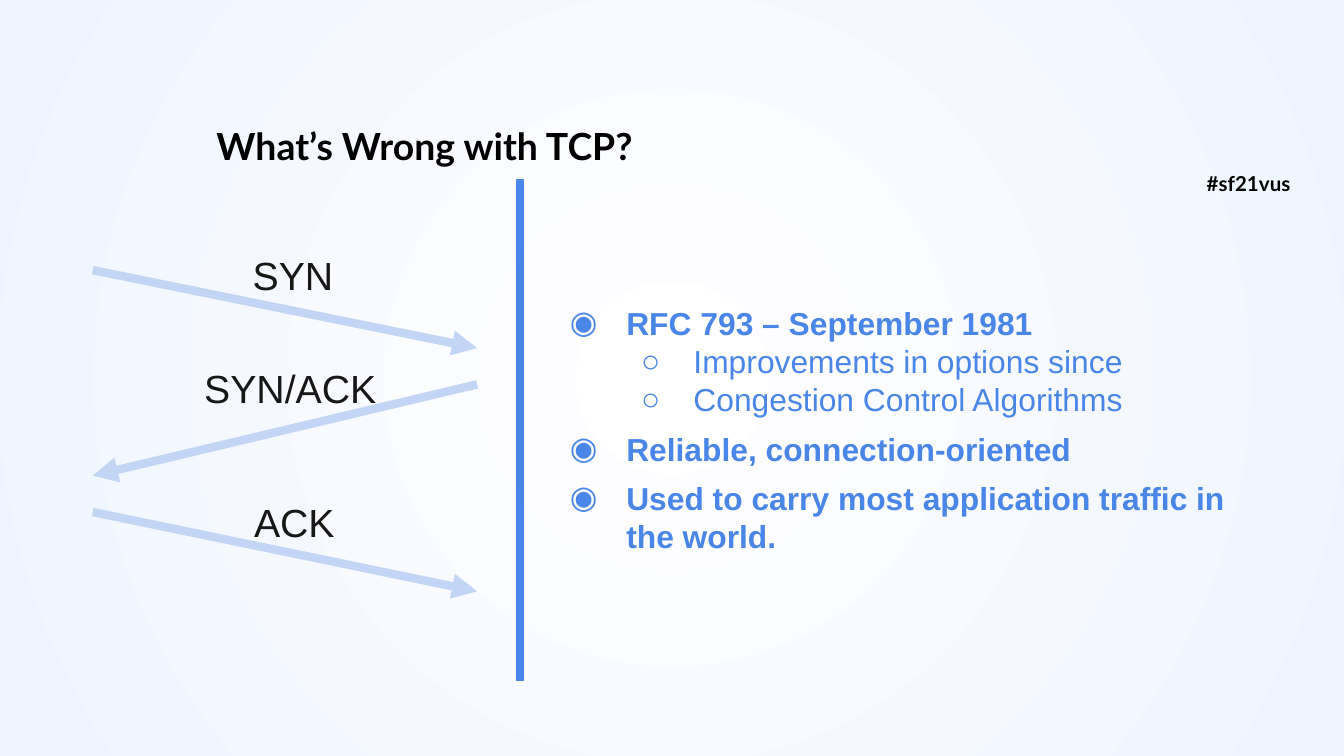
from lxml.etree import SubElement
from pptx import Presentation
from pptx.dml.color import RGBColor
from pptx.enum.shapes import MSO_CONNECTOR as Connector
from pptx.enum.text import MSO_ANCHOR as Anchor, MSO_AUTO_SIZE as AutoSize, PP_ALIGN as Align
from pptx.oxml.ns import qn
from pptx.util import Inches, Pt

WHITE = RGBColor(0xFF, 0xFF, 0xFF)
PALE_BLUE = RGBColor(0xEE, 0xF4, 0xFF)
BLUE = RGBColor(0x4A, 0x86, 0xE8)
LIGHT_BLUE = RGBColor(0xC3, 0xD5, 0xF4)
BLACK = RGBColor(0, 0, 0)
INK = RGBColor(0x17, 0x17, 0x17)

POINTS = [
    (0, "RFC 793 – September 1981"),
    (1, "Improvements in options since"),
    (1, "Congestion Control Algorithms"),
    (0, "Reliable, connection-oriented"),
    (0, "Used to carry most application traffic in the world."),
]
BULLETS = [("◉", 0.5, -0.42), ("○", 1, -0.39)]
CLIENT, SERVER = 0.69, 3.55
HANDSHAKE = [
    ("SYN", (1.88, 1.5, 0.75, 0.75), (CLIENT, 2.01), (SERVER, 2.59)),
    ("SYN/ACK", (1.52, 2.34, 1.47, 0.75), (SERVER, 2.86), (CLIENT, 3.54)),
    ("ACK", (1.89, 3.34, 0.75, 0.75), (CLIENT, 3.81), (SERVER, 4.4)),
]


def write_text(paragraph, text, size=17, font="Arial", color=BLACK, bold=False):
    """Add a formatted run of text to a paragraph."""
    run = paragraph.add_run()
    run.text = text
    run.font.size = Pt(size)
    run.font.name = font
    run.font.color.rgb = color
    run.font.bold = bold


class SlideBuilder:
    """Hold the style and the current slide, and add elements to it."""

    heading_font = "Lato"
    body_font = "Arial"

    def __init__(self, slide):
        """Start building on the given slide."""
        self.slide = slide

    def background(self, center, edge):
        """Fill the background with a circular gradient."""
        fill = self.slide.background.fill
        fill.gradient()
        for stop, color in zip(fill.gradient_stops, (center, edge)):
            stop.color.rgb = color
        linear = next(self.slide.element.iter(qn("a:lin")))
        gradient = linear.getparent()
        gradient.remove(linear)
        circle = SubElement(gradient, qn("a:path"), {"path": "circle"})
        SubElement(circle, qn("a:fillToRect"), dict.fromkeys("ltrb", "50000"))

    def frame(self, shape, box, insets, anchor, wrap=True):
        """Place a text shape and return its set-up text frame."""
        shape.left, shape.top, shape.width, shape.height = map(Inches, box)
        frame = shape.text_frame
        frame.auto_size = AutoSize.NONE
        frame.word_wrap = wrap
        frame.vertical_anchor = anchor
        (frame.margin_left, frame.margin_top,
         frame.margin_right, frame.margin_bottom) = map(Inches, insets)
        return frame

    def title(self, text, box):
        """Fill the title placeholder."""
        frame = self.frame(self.slide.shapes.title, box, [0.1] * 4, Anchor.MIDDLE)
        frame.paragraphs[0].alignment = Align.LEFT
        write_text(frame.paragraphs[0], text, size=20, font=self.heading_font, bold=True)

    def bullets(self, points, box):
        """Fill the body placeholder with a two-level list."""
        body = self.slide.placeholders[1]
        frame = self.frame(body, box, (0, 0.1, 0.1, 0.1), Anchor.MIDDLE)
        for index, (level, text) in enumerate(points):
            paragraph = frame.add_paragraph() if index else frame.paragraphs[0]
            paragraph.level = level
            paragraph.space_before = Pt(6 if index and level == 0 else 0)
            mark, margin, indent = BULLETS[level]
            properties = paragraph._p.get_or_add_pPr()
            properties.set("marL", str(Inches(margin)))
            properties.set("indent", str(Inches(indent)))
            mark_color = SubElement(properties, qn("a:buClr"))
            SubElement(mark_color, qn("a:srgbClr"), val=str(BLUE))
            SubElement(properties, qn("a:buFont"), typeface=self.body_font)
            SubElement(properties, qn("a:buChar"), char=mark)
            write_text(paragraph, text, font=self.body_font, color=BLUE, bold=level == 0)

    def hashtag(self, text, box):
        """Add the event hashtag in a box that grows with its text."""
        label = self.slide.shapes.add_textbox(0, 0, 0, 0)
        frame = self.frame(label, box, [0.1] * 4, Anchor.TOP)
        frame.auto_size = AutoSize.SHAPE_TO_FIT_TEXT
        write_text(frame.paragraphs[0], text, size=11, font=self.heading_font, bold=True)

    def message(self, text, box):
        """Add the label of a handshake message."""
        label = self.slide.shapes.add_textbox(0, 0, 0, 0)
        frame = self.frame(label, box, (0, 0.03, 0.05, 0.03), Anchor.BOTTOM, wrap=False)
        frame.paragraphs[0].line_spacing = 0.85
        write_text(frame.paragraphs[0], text, size=21, font=self.body_font, color=INK)

    def line(self, start, end, color, width, arrow=False):
        """Add a straight line, with an arrowhead at its end if asked."""
        points = map(Inches, (*start, *end))
        connector = self.slide.shapes.add_connector(Connector.STRAIGHT, *points)
        connector.line.color.rgb = color
        connector.line.width = Pt(width)
        if arrow:
            SubElement(connector.line._get_or_add_ln(), qn("a:tailEnd"), type="triangle")
        SubElement(connector._element.spPr, qn("a:effectLst"))


def main():
    """Build the slide and save it."""
    deck = Presentation()
    deck.slide_width, deck.slide_height = Inches(10), Inches(10) * 9 // 16
    builder = SlideBuilder(deck.slides.add_slide(deck.slide_layouts[1]))
    builder.background(WHITE, PALE_BLUE)
    builder.hashtag("#sf21vus", (8.88, 1.18, 1.12, 0.39))
    builder.line((3.87, 1.33), (3.87, 5.07), BLUE, 4)
    builder.title("What’s Wrong with TCP?", (1.51, 0.84, 7.45, 0.48))
    builder.bullets(POINTS, (4.16, 1.33, 5.34, 3.73))
    for _, _, start, end in HANDSHAKE:
        builder.line(start, end, LIGHT_BLUE, 4.5, arrow=True)
    for text, box, _, _ in HANDSHAKE:
        builder.message(text, box)
    deck.save("out.pptx")


if __name__ == "__main__":
    main()
